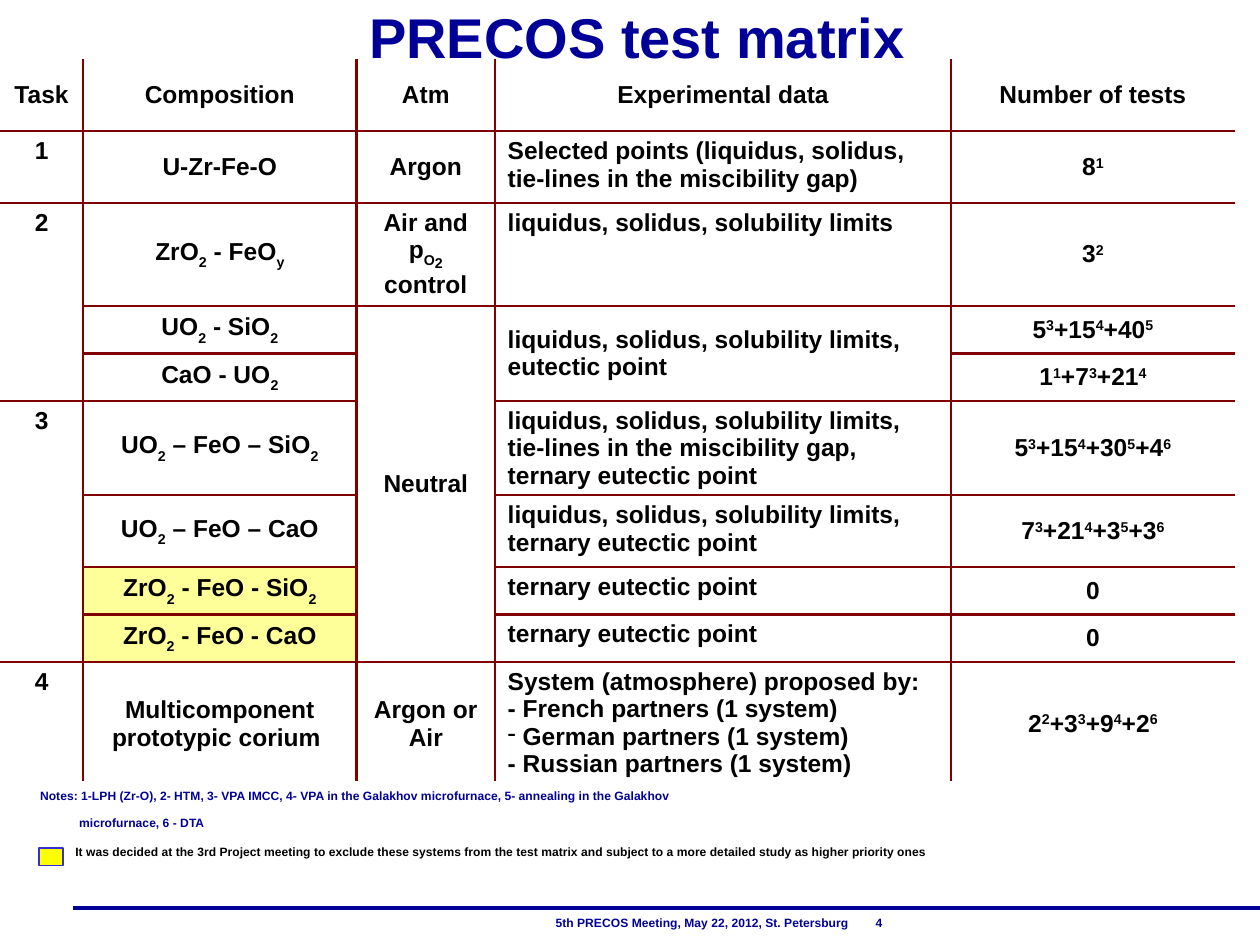
from lxml import etree
from pptx import Presentation
from pptx import util as u
from pptx.dml.color import RGBColor
from pptx.enum import shapes, text
from pptx.oxml.ns import qn

FONT = "Arial"
TABLE_SIZE = 14
COLORS = {
    "navy": "000099", "text": "000000", "border": "800000", "white": "FFFFFF",
    "excluded": "FFFF99", "swatch": "FFFF00", "swatch_line": "3333CC",
}
# Marks that switch a raised or lowered run on and off, with the shift in %
SHIFTS = {"_": -30, "^": 30, "~": -25, "=": -40}

COLUMNS = [0.66, 2.17, 1.1, 3.62, 2.25]
ROWS = [0.57, 0.57, 0.82, 0.35, 0.36, 0.75, 0.57, 0.36, 0.36, 0.97]
# Task, composition, atmosphere, experimental data, number of tests.
# None continues the cell above.
MATRIX = [
    ["Task", "Composition", "Atm", "Experimental data", "Number of tests"],
    ["1", "U-Zr-Fe-O", "Argon",
     "Selected points (liquidus, solidus, tie-lines in the miscibility gap)", "8^1^"],
    ["2", "ZrO_2_ - FeO_y_", "Air and p~O~=2 =control",
     "liquidus, solidus, solubility limits", "3^2^"],
    [None, "UO_2_ - SiO_2_", "Neutral",
     "liquidus, solidus, solubility limits,\neutectic point", "5^3^+15^4^+40^5^"],
    [None, "CaO - UO_2_", None, None, "1^1^+7^3^+21^4^"],
    ["3", "UO_2_ – FeO – SiO_2_", None,
     "liquidus, solidus, solubility limits, tie-lines in the miscibility gap, "
     "ternary eutectic point", "5^3^+15^4^+30^5^+4^6^"],
    [None, "UO_2_ – FeO – CaO", None,
     "liquidus, solidus, solubility limits, ternary eutectic point",
     "7^3^+21^4^+3^5^+3^6^"],
    [None, "ZrO_2_ - FeO - SiO_2_", None, "ternary eutectic point", "0"],
    [None, "ZrO_2_ - FeO - CaO", None, "ternary eutectic point", "0"],
    ["4", "Multicomponent prototypic corium ", "Argon or Air",
     "System (atmosphere) proposed by:\v- French partners (1 system)\n"
     "* German partners (1 system)\n- Russian partners (1 system)",
     "2^2^+3^3^+9^4^+2^6^"],
]
EXCLUDED_ROWS = (7, 8)


def rgb(name):
    return RGBColor.from_string(COLORS[name])


def add_run(paragraph, words, size, color, shift=0):
    run = paragraph.add_run()
    run.text = words
    run.font.name, run.font.size, run.font.bold = FONT, u.Pt(size), True
    run.font.color.rgb = rgb(color)
    if shift:
        run.font._element.set("baseline", str(shift * 1000))


def add_marked_runs(paragraph, marked, size, color):
    """Split marked text into normal, raised and lowered runs."""
    words, shift = "", 0
    for sign in marked:
        if sign not in SHIFTS and sign != "\v":
            words += sign
            continue
        if words:
            add_run(paragraph, words, size, color, shift)
        words = ""
        if sign == "\v":
            paragraph.add_line_break()
            etree.SubElement(paragraph._p[-1], qn("a:rPr"), sz=str(size * 100))
        else:
            shift = 0 if shift else SHIFTS[sign]
    if words:
        add_run(paragraph, words, size, color, shift)


def set_borders(cell, visible):
    """Draw the named sides (L, R, T, B) and clear the others."""
    properties = cell._tc.get_or_add_tcPr()
    for index, side in enumerate("LRTB"):
        line = etree.Element(qn(f"a:ln{side}"), w=str(u.Pt(1.5)))
        if side in visible:
            fill = etree.SubElement(line, qn("a:solidFill"))
            etree.SubElement(fill, qn("a:srgbClr"), val=COLORS["border"])
        else:
            etree.SubElement(line, qn("a:noFill"))
        properties.insert(index, line)


def fill_cell(cell, marked, centred, middle):
    cell.vertical_anchor = text.MSO_ANCHOR.MIDDLE if middle else text.MSO_ANCHOR.TOP
    if not middle:
        cell.margin_bottom = 0
    frame = cell.text_frame
    for index, line in enumerate(marked.split("\n")):
        paragraph = frame.add_paragraph() if index else frame.paragraphs[0]
        paragraph.alignment = text.PP_ALIGN.CENTER if centred else text.PP_ALIGN.LEFT
        if line.startswith("*"):
            line = line[1:]
            bullet = etree.SubElement(paragraph._p.get_or_add_pPr(), qn("a:buChar"))
            bullet.set("char", "-")
        add_marked_runs(paragraph, line, TABLE_SIZE, "text")


def end_paragraphs(cell):
    """Keep paragraph ends at the table's size, so that no row grows."""
    for paragraph in cell.text_frame.paragraphs:
        for old_end in paragraph._p.findall(qn("a:endParaRPr")):
            paragraph._p.remove(old_end)
        etree.SubElement(paragraph._p, qn("a:endParaRPr"), sz=str(TABLE_SIZE * 100))


def add_matrix(slide, left, top, width, height):
    table = slide.shapes.add_table(
        len(ROWS), len(COLUMNS), left, top, width, height).table
    table.first_row = table.horz_banding = False
    for column, size in zip(table.columns, COLUMNS):
        column.width = u.Inches(size)
    for row, size in zip(table.rows, ROWS):
        row.height = u.Inches(size)

    last_row, last_column = len(ROWS) - 1, len(COLUMNS) - 1
    for r, entries in enumerate(MATRIX):
        for c, entry in enumerate(entries):
            cell = table.cell(r, c)
            if c == 1 and r in EXCLUDED_ROWS:
                cell.fill.solid()
                cell.fill.fore_color.rgb = rgb("excluded")
            else:
                cell.fill.background()
            # Inner rules only, and none inside a merged cell
            sides = {"L": c > 0, "R": c < last_column, "T": r > 0 and entry is not None,
                     "B": r < last_row and MATRIX[min(r + 1, last_row)][c] is not None}
            set_borders(cell, [side for side, shown in sides.items() if shown])
            if entry is not None:
                end = r
                while end < last_row and MATRIX[end + 1][c] is None:
                    end += 1
                if end > r:
                    cell.merge(table.cell(end, c))
                middle = (r == 0 or c in (1, 4) or (c == 2 and r != 2)
                          or (c == 3 and end > r))
                fill_cell(cell, entry, r == 0 or c != 3, middle)
            end_paragraphs(cell)


def add_title(slide, left, top, width, height):
    frame = slide.shapes.add_textbox(left, top, width, height).text_frame
    frame.word_wrap = True
    frame.vertical_anchor = text.MSO_ANCHOR.MIDDLE
    title = frame.paragraphs[0]
    title.alignment = text.PP_ALIGN.CENTER
    add_run(title, "PRECOS test matrix", 32, "navy")
    add_run(title, " ", 28, "navy")


def add_box(slide, left, top, width, height, fill):
    box = slide.shapes.add_shape(shapes.MSO_SHAPE.RECTANGLE, left, top, width, height)
    box.shadow.inherit = False
    box.fill.solid()
    box.fill.fore_color.rgb = rgb(fill)
    box.line.fill.background()
    return box


def add_notes_panel(slide, left, top, width, height):
    frame = add_box(slide, left, top, width, height, "white").text_frame
    frame.word_wrap = True
    frame.vertical_anchor = text.MSO_ANCHOR.TOP
    frame.margin_top = u.Inches(0.04)
    # Words, colour, indent, space before in points
    lines = [
        ("Notes: 1-LPH (Zr-O), 2- HTM, 3- VPA IMCC, 4- VPA in the Galakhov "
         "microfurnace, 5- annealing in the Galakhov", "navy", 0.22, 0),
        ("microfurnace, 6 - DTA", "navy", 0.53, 0.5),
        ("It was decided at the 3rd Project meeting to exclude these systems from the "
         "test matrix and subject to a more detailed study as higher priority ones",
         "text", 0.5, 2.5),
    ]
    for index, (words, color, indent, space) in enumerate(lines):
        paragraph = frame.add_paragraph() if index else frame.paragraphs[0]
        paragraph.alignment = text.PP_ALIGN.LEFT
        paragraph._p.get_or_add_pPr().set("marL", str(u.Inches(indent)))
        if space:
            paragraph.space_before = u.Pt(space)
        add_run(paragraph, words, 12, color, 30)
    # Key to the excluded systems
    swatch = add_box(slide, left + u.Inches(0.31), top + u.Inches(0.53),
                     u.Inches(0.19), u.Inches(0.14), "swatch")
    swatch.line.color.rgb = rgb("swatch_line")
    swatch.line.width = u.Pt(1)


def add_footer(slide, left, top, width, height):
    rule_y = top + u.Inches(0.02)
    rule = slide.shapes.add_connector(shapes.MSO_CONNECTOR.STRAIGHT,
                                      u.Inches(0.58), rule_y, left + width, rule_y)
    rule.line.color.rgb = rgb("navy")
    rule.line.width = u.Pt(2.25)
    etree.SubElement(rule._element.spPr, qn("a:effectLst"))

    frame = slide.shapes.add_textbox(left, top, width, height).text_frame
    frame.word_wrap = True
    frame.vertical_anchor = text.MSO_ANCHOR.MIDDLE
    frame.margin_left = u.Inches(4.05)
    meeting = frame.paragraphs[0]
    tabs = etree.SubElement(meeting._p.get_or_add_pPr(), qn("a:tabLst"))
    etree.SubElement(tabs, qn("a:tab"), pos=str(u.Inches(2.54)), algn="l")
    add_run(meeting, "5th PRECOS Meeting, May 22, 2012, St. Petersburg\t4", 12, "navy", 30)


def main():
    deck = Presentation()
    deck.slide_width, deck.slide_height = u.Inches(10), u.Inches(7.5)
    slide = deck.slides.add_slide(deck.slide_layouts[6])
    regions = [
        (add_footer, (0.36, 7.19, 9.64, 0.31)),
        (add_title, (0.86, -0.07, 8.5, 0.71)),
        (add_matrix, (0, 0.47, sum(COLUMNS), sum(ROWS))),
        (add_notes_panel, (0, 6.2, 10, 0.99)),
    ]
    for add_region, box in regions:
        add_region(slide, *(u.Inches(length) for length in box))
    deck.save("out.pptx")


if __name__ == "__main__":
    main()
